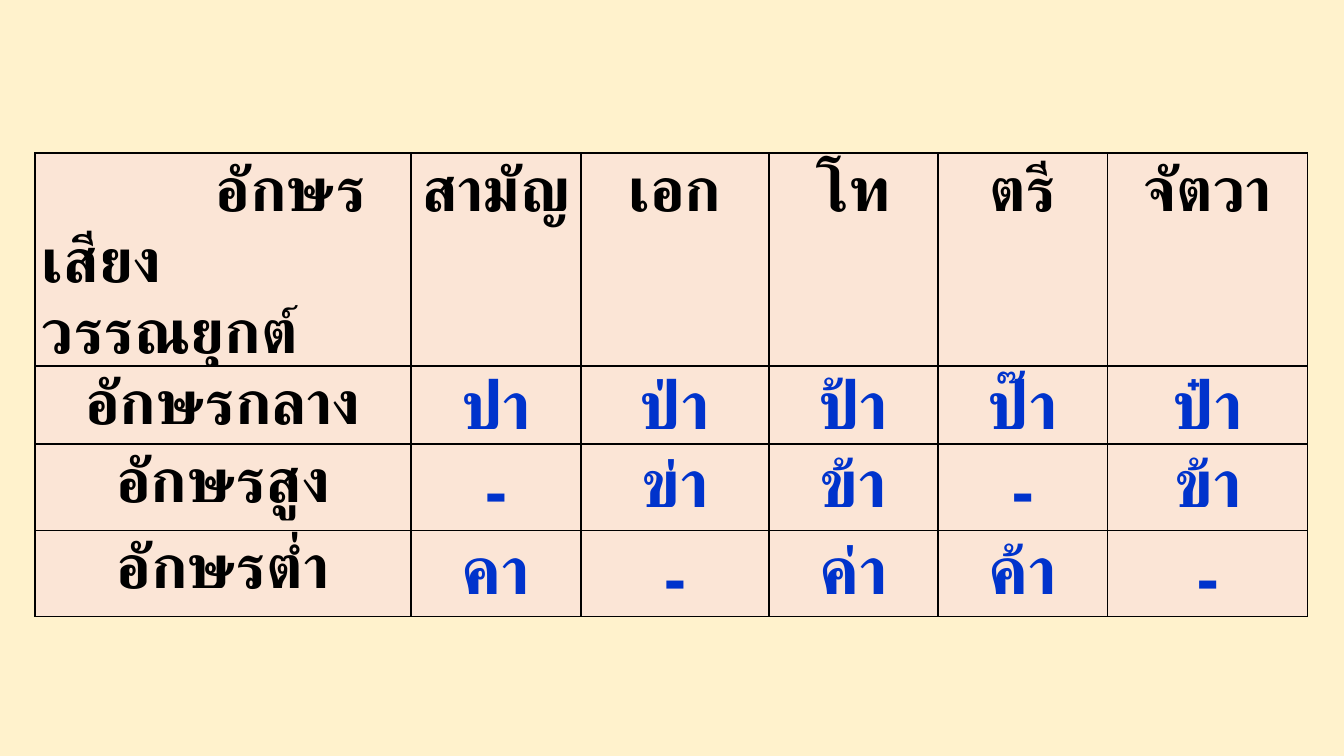
from lxml.etree import SubElement
from pptx import Presentation
from pptx.dml.color import RGBColor
from pptx.enum.text import PP_ALIGN
from pptx.oxml.ns import qn
from pptx.util import Pt

EMU_PER_PX = 914400 / 100.8
LATIN_FONT, THAI_FONT = "Arial", "Angsana New"
CREAM, PEACH, BLACK, BLUE = "FFF2CC", "FBE5D6", "000000", "0033CC"
COLUMN_WIDTHS = [376, 170, 188, 169, 170, 200]
ROW_HEIGHTS = [213, 78, 86, 86]
CORNER_INDENT = 136

TONES = ["สามัญ", "เอก", "โท", "ตรี", "จัตวา"]
CONSONANT_CLASSES = [
    ["อักษรกลาง", "ปา", "ป่า", "ป้า", "ป๊า", "ป๋า"],
    ["อักษรสูง", "-", "ข่า", "ข้า", "-", "ข้า"],
    ["อักษรต่ำ", "คา", "-", "ค่า", "ค้า", "-"],
]


def px(length):
    return round(length * EMU_PER_PX)


def color(hex_string):
    return RGBColor.from_string(hex_string)


def write(paragraph, text, size=44, ink=BLACK, alignment=PP_ALIGN.CENTER):
    paragraph.alignment = alignment
    paragraph.line_spacing = 1.15
    run = paragraph.add_run()
    run.text = text
    run.font.name = LATIN_FONT
    run.font.size = Pt(size)
    run.font.bold = True
    run.font.color.rgb = color(ink)
    SubElement(run.font._element, qn("a:cs"), typeface=THAI_FONT)


def format_cell(cell):
    """Set margins, thin black borders and the fill."""
    cell.margin_left = cell.margin_right = px(7)
    cell.margin_top = cell.margin_bottom = 0
    properties = cell._tc.get_or_add_tcPr()
    for side in ("lnL", "lnR", "lnT", "lnB"):
        line = SubElement(properties, qn(f"a:{side}"), w=str(Pt(1)))
        fill = SubElement(line, qn("a:solidFill"))
        SubElement(fill, qn("a:srgbClr"), val=BLACK)
    cell.fill.solid()
    cell.fill.fore_color.rgb = color(PEACH)


def write_corner(cell):
    """Put the column heading on the right and the row heading below it."""
    heading = cell.text_frame.paragraphs[0]
    write(heading, "อักษร")
    heading._p.get_or_add_pPr().set("marL", str(px(CORNER_INDENT)))
    write(cell.text_frame.add_paragraph(), "เสียงวรรณยุกต์", alignment=PP_ALIGN.LEFT)


def add_tone_table(slide, left, top):
    table = slide.shapes.add_table(
        len(ROW_HEIGHTS), len(COLUMN_WIDTHS), px(left), px(top),
        px(sum(COLUMN_WIDTHS)), px(sum(ROW_HEIGHTS))).table
    table.first_row = table.horz_banding = False
    for column, width in zip(table.columns, COLUMN_WIDTHS):
        column.width = px(width)
    for row, height in zip(table.rows, ROW_HEIGHTS):
        row.height = px(height)
    for cell in table.iter_cells():
        format_cell(cell)

    write_corner(table.cell(0, 0))
    for column, tone in enumerate(TONES, start=1):
        write(table.cell(0, column).text_frame.paragraphs[0], tone)
    for row, (name, *syllables) in enumerate(CONSONANT_CLASSES, start=1):
        write(table.cell(row, 0).text_frame.paragraphs[0], name)
        for column, syllable in enumerate(syllables, start=1):
            write(table.cell(row, column).text_frame.paragraphs[0], syllable, 48, BLUE)


def main():
    presentation = Presentation()
    presentation.slide_width, presentation.slide_height = px(1344), px(756)
    slide = presentation.slides.add_slide(presentation.slide_layouts[6])
    slide.background.fill.solid()
    slide.background.fill.fore_color.rgb = color(CREAM)
    add_tone_table(slide, 35, 153)
    presentation.save("out.pptx")


if __name__ == "__main__":
    main()
